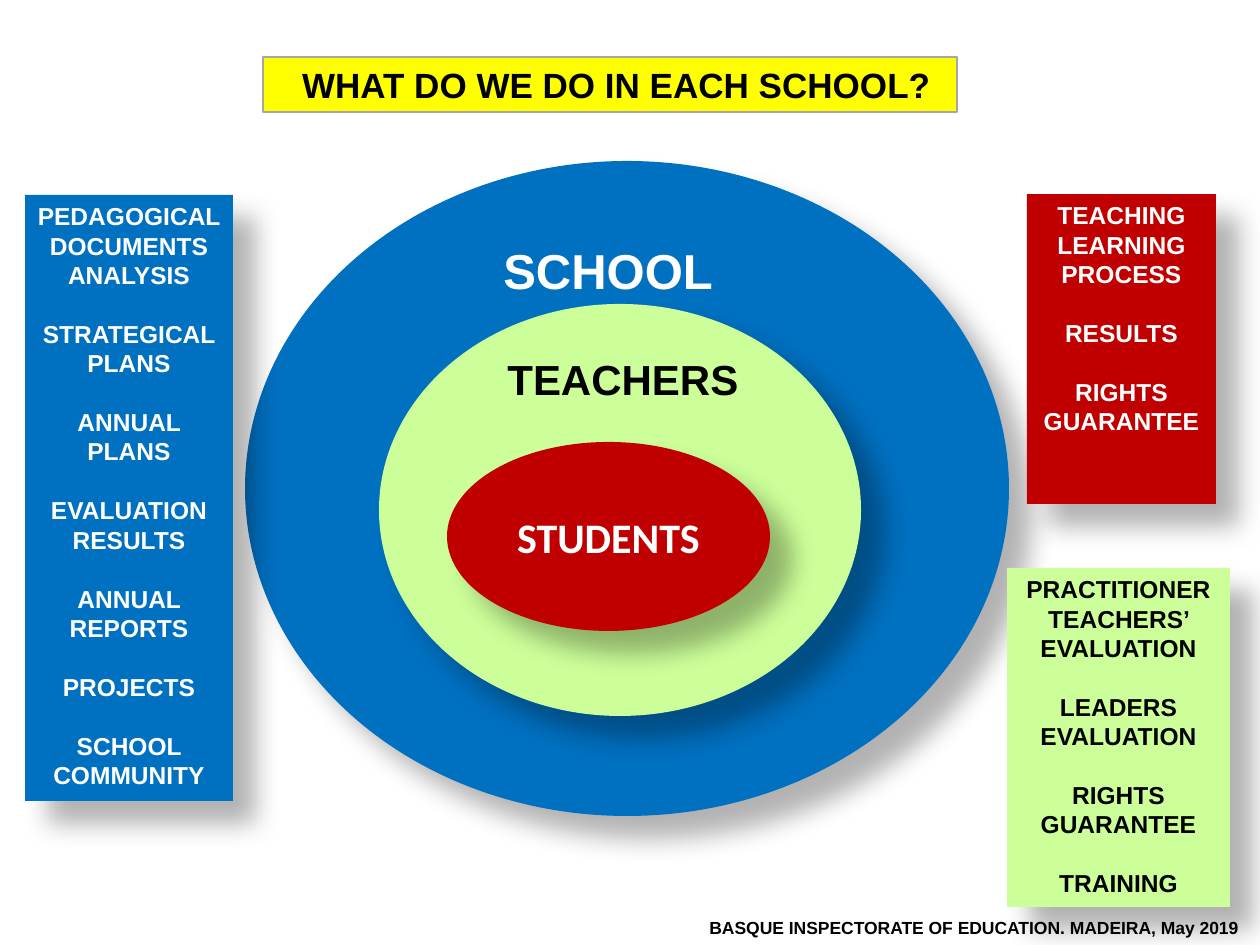
import pptx
import pptx.util
import pptx.dml.color
import pptx.enum.shapes
import pptx.enum.text
import pptx.oxml
import pptx.oxml.ns

PX = 914400 / 126
SHAPE = pptx.enum.shapes.MSO_SHAPE
ALIGN = pptx.enum.text.PP_ALIGN
ANCHOR = pptx.enum.text.MSO_ANCHOR

BLUE, RED, GREEN = "0070C0", "C00000", "CCFF99"
BLACK, WHITE, YELLOW, GREY = "000000", "FFFFFF", "FFFF00", "A6A6A6"

# Content; boxes are left, top, width, height in px
TITLE = ("WHAT DO WE DO IN EACH SCHOOL?", (263, 57, 694, 55))
RINGS = [
    ((245, 161, 764, 655), BLUE, ""),
    ((379, 304, 482, 412), GREEN, ""),
    ((447, 442, 323, 189), RED, "STUDENTS"),
]
LABELS = [
    ("SCHOOL", (491, 234, 258, 72), 28, WHITE),
    ("TEACHERS", (495, 347, 263, 63), 24, BLACK),
    ("BASQUE INSPECTORATE OF EDUCATION. MADEIRA, May 2019", (697, 911, 563, 34), 10, BLACK),
]
PANELS = [
    ((25, 195, 208, 606), BLUE, WHITE, [
        "PEDAGOGICAL DOCUMENTS ANALYSIS", "STRATEGICAL PLANS", "ANNUAL PLANS",
        "EVALUATION RESULTS", "ANNUAL REPORTS", "PROJECTS", "SCHOOL COMMUNITY"]),
    ((1027, 194, 189, 310), RED, WHITE, [
        "TEACHING LEARNING PROCESS", "RESULTS", "RIGHTS GUARANTEE"]),
    ((1007, 568, 223, 339), GREEN, BLACK, [
        "PRACTITIONER TEACHERS’ EVALUATION", "LEADERS EVALUATION",
        "RIGHTS GUARANTEE", "TRAINING"]),
]
SHADOW = (
    '<a:effectLst %s><a:outerShdw blurRad="190500" dist="228600" dir="2700000" '
    'algn="tl" rotWithShape="0"><a:srgbClr val="000000"><a:alpha val="30000"/>'
    '</a:srgbClr></a:outerShdw></a:effectLst>' % pptx.oxml.ns.nsdecls("a"))


def emu(box):
    return [round(length * PX) for length in box]


def colour(value):
    return pptx.dml.color.RGBColor.from_string(value)


def write(shape, texts, size, text_colour, align=ALIGN.LEFT, anchor=ANCHOR.TOP,
          font="Arial", gap=0):
    frame = shape.text_frame
    frame.word_wrap = True
    frame.auto_size = pptx.enum.text.MSO_AUTO_SIZE.NONE
    frame.vertical_anchor = anchor
    for index, text in enumerate(texts):
        para = frame.add_paragraph() if index else frame.paragraphs[0]
        para.text = text
        para.alignment = align
        if index and gap:
            para.space_before = pptx.util.Pt(gap)
        para.font.name = font
        para.font.size = pptx.util.Pt(size)
        para.font.bold = True
        para.font.color.rgb = colour(text_colour)


def add_shadowed(page, kind, box, fill):
    shape = page.shapes.add_shape(kind, *emu(box))
    shape.fill.solid()
    shape.fill.fore_color.rgb = colour(fill)
    shape.line.fill.background()
    shape._element.spPr.append(pptx.oxml.parse_xml(SHADOW))
    return shape


def main():
    deck = pptx.Presentation()
    deck.slide_width, deck.slide_height = emu((1260, 945))
    page = deck.slides.add_slide(deck.slide_layouts[5])

    # Title bar
    text, box = TITLE
    title = page.shapes.title
    title.left, title.top, title.width, title.height = emu(box)
    title.fill.solid()
    title.fill.fore_color.rgb = colour(YELLOW)
    title.line.color.rgb = colour(GREY)
    title.line.width = pptx.util.Pt(0.75)
    write(title, [text], 20, BLACK, anchor=ANCHOR.MIDDLE)
    title.text_frame.margin_left = round(39 * PX)

    # Nested ellipses
    for box, fill, text in RINGS:
        ring = add_shadowed(page, SHAPE.OVAL, box, fill)
        if text:
            write(ring, [text], 24, WHITE, ALIGN.CENTER, ANCHOR.MIDDLE, "Calibri")

    # Side panels, one blank line's height between entries
    for box, fill, text_colour, entries in PANELS:
        panel = add_shadowed(page, SHAPE.RECTANGLE, box, fill)
        write(panel, entries, 14, text_colour, ALIGN.CENTER, gap=16.8)

    # Ring labels and footer
    for text, box, size, text_colour in LABELS:
        write(page.shapes.add_textbox(*emu(box)), [text], size, text_colour)

    deck.save("out.pptx")


if __name__ == "__main__":
    main()
